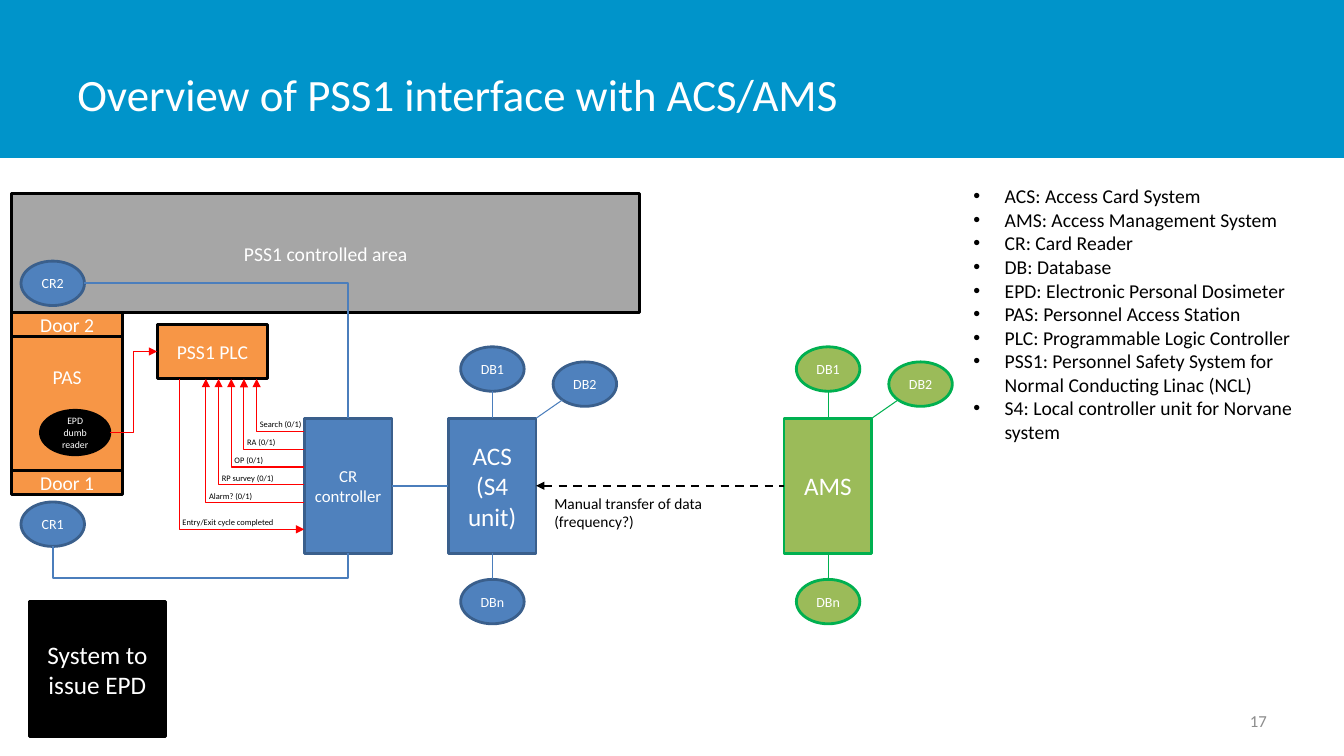
from dataclasses import dataclass

from lxml import etree
from pptx import Presentation
from pptx.dml.color import RGBColor
from pptx.enum.dml import MSO_LINE
from pptx.enum.shapes import MSO_CONNECTOR, MSO_SHAPE
from pptx.enum.text import MSO_ANCHOR, PP_ALIGN
from pptx.oxml.ns import qn
from pptx.util import Cm, Pt

RECT, OVAL = MSO_SHAPE.RECTANGLE, MSO_SHAPE.OVAL
STRAIGHT, ELBOW = MSO_CONNECTOR.STRAIGHT, MSO_CONNECTOR.ELBOW
LEFT, CENTER, RIGHT = PP_ALIGN.LEFT, PP_ALIGN.CENTER, PP_ALIGN.RIGHT
TOP, MIDDLE = MSO_ANCHOR.TOP, MSO_ANCHOR.MIDDLE
SIDE_LEFT, SIDE_RIGHT = 1, 3


@dataclass(frozen=True)
class Theme:
    font: str = "Calibri"
    band: str = "0094CA"
    white: str = "FFFFFF"
    black: str = "000000"
    muted: str = "8C8C8C"
    area: str = "A6A6A6"
    orange: str = "F79646"
    blue: str = "4F81BD"
    blue_edge: str = "3A5F8C"
    blue_link: str = "4B7EBC"
    green: str = "9BBB59"
    green_edge: str = "00B050"
    signal: str = "FF0000"
    title: int = 32
    unit: int = 18
    body: int = 14
    small: int = 12
    note: int = 11
    node: int = 10
    reader: int = 7
    tiny: int = 6


THEME = Theme()


@dataclass(frozen=True)
class Frame:
    left: float
    top: float
    width: float
    height: float


@dataclass(frozen=True)
class Block:
    text: str
    frame: Frame
    fill: str
    edge: str
    size: int
    kind: int = RECT


@dataclass(frozen=True)
class Label:
    text: str
    frame: Frame
    size: int
    color: str = THEME.black
    align: int = LEFT
    anchor: int = TOP
    wrap: bool = True
    bullet: bool = False


@dataclass(frozen=True)
class Signal:
    text: str
    width: float


def lengths(frame):
    return [Cm(v) for v in (frame.left, frame.top, frame.width, frame.height)]


def add_bullet(para):
    props = para._p.get_or_add_pPr()
    props.set("marL", str(Cm(0.79)))
    props.set("indent", str(Cm(-0.79)))
    etree.SubElement(props, qn("a:buFont"), typeface="Arial")
    etree.SubElement(props, qn("a:buChar"), char="•")


def write(box, text: str, size: int, color: str, align: int, bullet: bool = False) -> None:
    box.text_frame.text = text
    for para in box.text_frame.paragraphs:
        if bullet:
            add_bullet(para)
        para.alignment = align
        for name, value in {"name": THEME.font, "size": Pt(size)}.items():
            setattr(para.font, name, value)
        para.font.color.rgb = RGBColor.from_string(color)


def add_block(page, block: Block):
    box = page.shapes.add_shape(block.kind, *lengths(block.frame))
    box.shadow.inherit = False
    box.fill.solid()
    box.fill.fore_color.rgb = RGBColor.from_string(block.fill)
    box.line.color.rgb = RGBColor.from_string(block.edge)
    box.line.width = Pt(2)
    box.text_frame.vertical_anchor = MIDDLE
    write(box, block.text, block.size, THEME.white, CENTER)
    return box


def add_label(page, label: Label) -> None:
    box = page.shapes.add_textbox(*lengths(label.frame))
    box.text_frame.word_wrap = label.wrap
    box.text_frame.vertical_anchor = label.anchor
    write(box, label.text, label.size, label.color, label.align, label.bullet)


def add_link(page, start, end, color: str, width: float, kind: int = STRAIGHT, arrow: str = ""):
    """Connect two points; arrow is "headEnd" (at start) or "tailEnd" (at end)."""
    link = page.shapes.add_connector(kind, *(Cm(v) for v in (*start, *end)))
    link.line.color.rgb = RGBColor.from_string(color)
    link.line.width = Pt(width)
    if arrow:
        etree.SubElement(link.line._get_or_add_ln(), qn("a:" + arrow), type="triangle")
    etree.SubElement(link._element.spPr, qn("a:effectLst"))
    return link


def add_corner(page, start, end, color: str, width: float, arrow: str = "") -> None:
    """Connect two points with one bend: sideways first, then up or down."""
    link = add_link(page, start, end, color, width, ELBOW, arrow)
    link._element.spPr.prstGeom.set("prst", "bentConnector2")


def add_loop(page, start, end, low: float, color: str, width: float) -> None:
    """Connect two points by going down to the level low, right, and up."""
    (x1, y1), (x2, y2) = start, end
    run, rise = x2 - x1, y2 - y1
    left, top = (x1 + x2 - rise) / 2, (y1 + y2 - run) / 2
    link = add_link(page, (left, top), (left + rise, top + run), color, width, ELBOW)
    frame = link._element.spPr.find(qn("a:xfrm"))
    frame.set("rot", "16200000")
    frame.set("flipH", "1")
    guides = link._element.spPr.prstGeom.get_or_add_avLst()
    ratio = round((low - y1) / rise * 100000)
    etree.SubElement(guides, qn("a:gd"), name="adj1", fmla=f"val {ratio}")


def add_unit(page, text: str, left: float, fill: str, edge: str, link_color: str):
    """Draw a system unit with its three databases."""
    unit = add_block(page, Block(text, Frame(left, 10.54, 2.21, 3.4), fill, edge, THEME.unit))
    for name, dx, top in (("DB1", 0.31, 8.74), ("DB2", 2.64, 9.12), ("DBn", 0.31, 14.6)):
        add_block(page, Block(name, Frame(left + dx, top, 1.6, 1.12), fill, edge, THEME.node, OVAL))
    for x1, y1, x2, y2 in ((1.11, 9.86, 1.11, 10.54), (2.87, 10.08, 2.21, 10.54),
                           (1.11, 13.94, 1.11, 14.6)):
        add_link(page, (left + x1, y1), (left + x2, y2), link_color, 0.75)
    return unit


def add_signals(page) -> None:
    signals = (Signal("Search (0/1)", 1.57), Signal("RA (0/1)", 1.24), Signal("OP (0/1)", 1.24),
               Signal("RP survey (0/1)", 1.85), Signal("Alarm? (0/1)", 1.6))
    routes = [(s, 6.47 - 0.32 * i, 10.87 + 0.45 * i, "tailEnd") for i, s in enumerate(signals)]
    routes.append((Signal("Entry/Exit cycle completed", 2.82), 4.52, 13.34, "headEnd"))
    for signal, x, y, arrow in routes:
        add_corner(page, (7.67, y), (x, 9.55), THEME.signal, 0.75, arrow)
        frame = Frame(x - 0.17, y - 0.43, signal.width, 0.51)
        add_label(page, Label(signal.text, frame, THEME.tiny, wrap=False))


LEGEND = """ACS: Access Card System
AMS: Access Management System
CR: Card Reader
DB: Database
EPD: Electronic Personal Dosimeter
PAS: Personnel Access Station
PLC: Programmable Logic Controller
PSS1: Personnel Safety System for Normal Conducting Linac (NCL)
S4: Local controller unit for Norvane system"""

BLUE = (THEME.blue, THEME.blue_edge)
ORANGE = (THEME.orange, THEME.black)
DARK = (THEME.black, THEME.black)
BLOCKS = (
    Block("PSS1 controlled area", Frame(0.3, 4.88, 15.82, 3), THEME.area, THEME.black, THEME.body),
    Block("Door 1", Frame(0.3, 11.86, 2.79, 0.61), *ORANGE, THEME.body),
    Block("Door 2", Frame(0.3, 7.87, 2.79, 0.61), *ORANGE, THEME.body),
    Block("CR1", Frame(0.53, 12.65, 1.6, 1.12), *BLUE, THEME.node, OVAL),
    Block("CR2", Frame(0.53, 6.58, 1.6, 1.12), *BLUE, THEME.node, OVAL),
    Block("PSS1 PLC", Frame(3.96, 8.18, 2.79, 1.36), *ORANGE, THEME.body),
    Block("System to issue EPD", Frame(0.74, 15.16, 3.43, 3.4), *DARK, THEME.unit),
    Block("EPD dumb reader", Frame(1.02, 10.34, 1.75, 1.12), *DARK, THEME.reader, OVAL),
)
LABELS = (
    Label("Overview of PSS1 interface with ACS/AMS", Frame(1.7, 0.76, 26.44, 3.18),
          THEME.title, THEME.white, anchor=MIDDLE),
    Label("17", Frame(24.28, 17.65, 7.9, 1.02), THEME.small, THEME.muted, RIGHT, MIDDLE),
    Label("Manual transfer of data\n(frequency?)", Frame(13.72, 12.32, 4.29, 1.19),
          THEME.note, wrap=False),
    Label(LEGEND, Frame(24.28, 4.52, 9.47, 7.44), THEME.body, bullet=True),
)


def main() -> None:
    deck = Presentation()
    deck.slide_width, deck.slide_height = Cm(33.87), Cm(19.05)
    page = deck.slides.add_slide(deck.slide_layouts[6])

    band = add_block(page, Block("", Frame(0, 0, 33.87, 3.98), THEME.band, THEME.band, THEME.body))
    band.line.fill.background()
    station = add_block(page, Block("PAS", Frame(0.3, 8.46, 2.79, 3.4), *ORANGE, THEME.body))
    station.text_frame.vertical_anchor = TOP
    station.text_frame.margin_top = Cm(0.73)
    for block in BLOCKS:
        add_block(page, block)
    for label in LABELS:
        add_label(page, label)

    controller = add_block(page, Block("CR controller", Frame(7.67, 10.54, 2.21, 3.4),
                                       *BLUE, THEME.small))
    access = add_unit(page, "ACS\n(S4 unit)", 11.3, *BLUE, THEME.blue_link)
    management = add_unit(page, "AMS", 19.76, THEME.green, THEME.green_edge, THEME.green_edge)

    reading = add_link(page, (9.88, 12.24), (11.3, 12.24), THEME.blue_link, 1.5)
    transfer = add_link(page, (13.51, 12.24), (19.76, 12.24), THEME.black, 1.5, arrow="headEnd")
    transfer.line.dash_style = MSO_LINE.DASH
    for link, source, target in ((reading, controller, access), (transfer, access, management)):
        link.begin_connect(source, SIDE_RIGHT)
        link.end_connect(target, SIDE_LEFT)

    add_corner(page, (2.13, 7.14), (8.78, 10.54), THEME.blue_link, 1.5)
    add_loop(page, (1.33, 13.77), (8.78, 13.94), 14.57, THEME.blue_link, 1.5)
    add_link(page, (2.77, 10.9), (3.96, 8.86), THEME.signal, 0.75, ELBOW, "tailEnd")
    add_signals(page)
    deck.save("out.pptx")


if __name__ == "__main__":
    main()
